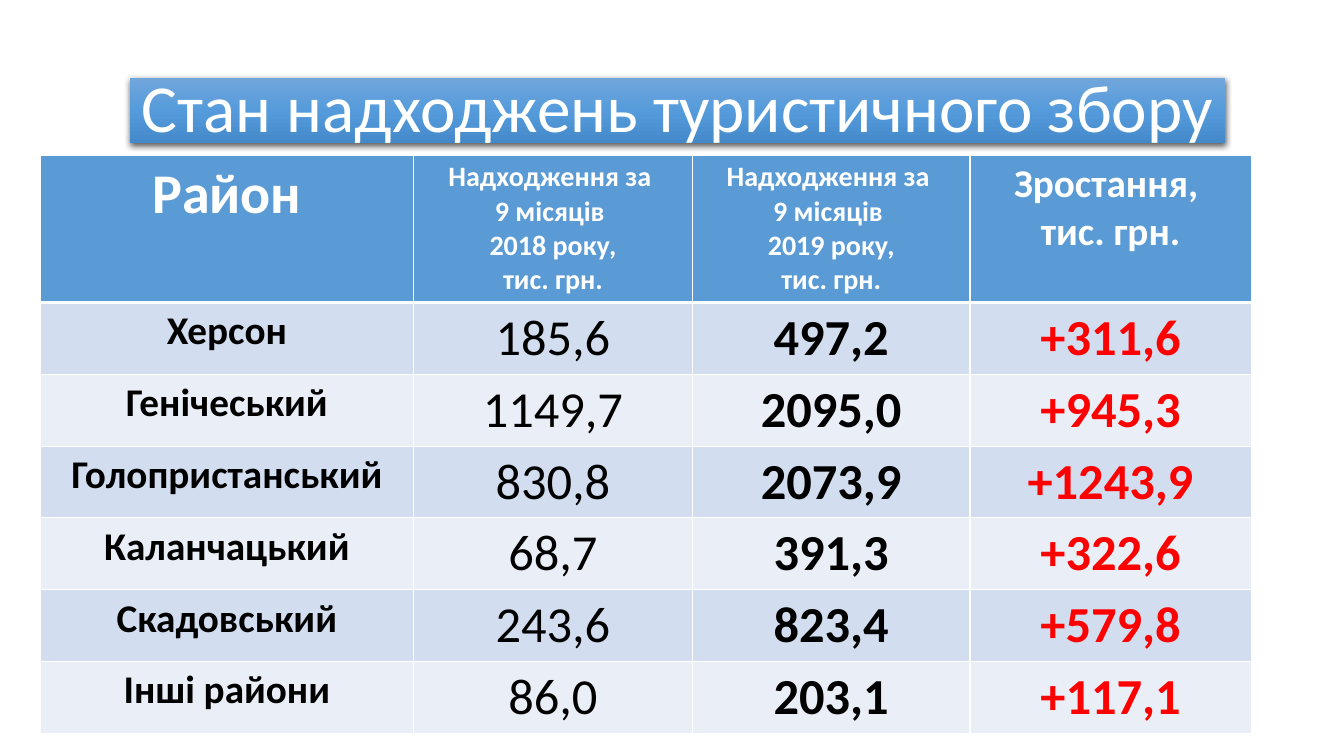
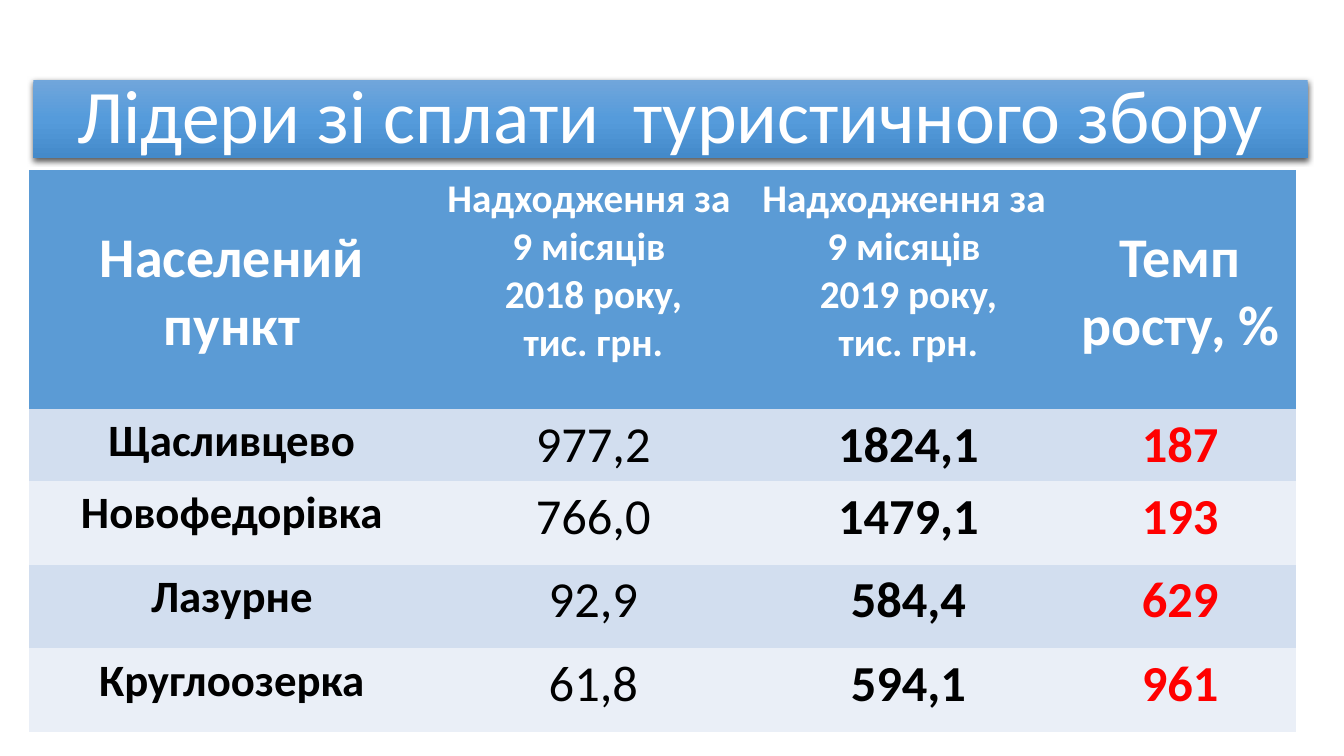
from dataclasses import dataclass

import lxml.etree
import pptx
import pptx.dml.color
import pptx.enum.text
import pptx.oxml
import pptx.util

PX = 9144  # EMU in one px: 100 px to the inch
SLIDE_W, SLIDE_H = 1333, 750
FONT = "Calibri"
WHITE, BLACK, RED = "FFFFFF", "000000", "FF0000"
HEADER_FILL = "5B9BD5"
BAND_FILLS = ("D2DEEF", "EAEFF7")
TITLE_STOPS = ((0, "71A6DB"), (50, "559BDB"), (100, "448ACA"))
NO_GRID_STYLE = "{2D5ABB26-0587-4C30-8999-92F81FD0307C}"
NS = "http://schemas.openxmlformats.org/drawingml/2006/main"
CENTER = pptx.enum.text.PP_ALIGN.CENTER


@dataclass
class Header:
    lines: tuple[str, ...]
    size: int
    top: int = 5


@dataclass
class Style:
    size: int
    bold: bool
    color: str


@dataclass
class Page:
    title: str
    title_size: int
    title_box: tuple[int, int, int, int]
    table_at: tuple[int, int]
    cols: tuple[int, ...]
    row_heights: tuple[int, ...]
    headers: tuple[Header, ...]
    name_size: int
    rows: tuple[tuple[str, ...], ...]
    grid: bool


def px(n: int) -> pptx.util.Emu:
    return pptx.util.Emu(n * PX)


def rgb(value: str) -> pptx.dml.color.RGBColor:
    return pptx.dml.color.RGBColor.from_string(value)


def income(year: int, size: int) -> Header:
    return Header(("Надходження за ", "9 місяців ", f"{year} року,", "тис. грн."), size)


def set_text(tf, lines: tuple[str, ...], style: Style) -> None:
    for i, line in enumerate(lines):
        p = tf.paragraphs[0] if i == 0 else tf.add_paragraph()
        p.alignment = CENTER
        r = p.add_run()
        r.text = line
        formats = {"name": FONT, "size": pptx.util.Pt(style.size), "bold": style.bold}
        for key, value in formats.items():
            setattr(r.font, key, value)
        r.font.color.rgb = rgb(style.color)


def add_title(s, page: Page) -> None:
    sp = s.shapes.title
    for key, value in zip(("left", "top", "width", "height"), page.title_box):
        setattr(sp, key, px(value))
    # Gradient band with a soft shadow
    stops = "".join(
        f'<a:gs pos="{pos * 1000}"><a:srgbClr val="{color}"/></a:gs>'
        for pos, color in TITLE_STOPS
    )
    parts = (
        '<a:prstGeom xmlns:a="{ns}" prst="rect"><a:avLst/></a:prstGeom>',
        '<a:gradFill xmlns:a="{ns}" rotWithShape="1"><a:gsLst>' + stops
        + '</a:gsLst><a:lin ang="5400000" scaled="0"/></a:gradFill>',
        '<a:effectLst xmlns:a="{ns}"><a:outerShdw blurRad="57150" dist="19050"'
        ' dir="5400000" algn="ctr" rotWithShape="0"><a:srgbClr val="000000">'
        '<a:alpha val="63000"/></a:srgbClr></a:outerShdw></a:effectLst>',
    )
    for xml in parts:
        sp.element.spPr.append(pptx.oxml.parse_xml(xml.format(ns=NS)))
    tf = sp.text_frame
    formats = {
        "auto_size": pptx.enum.text.MSO_AUTO_SIZE.NONE,
        "vertical_anchor": pptx.enum.text.MSO_ANCHOR.MIDDLE,
        "word_wrap": True,
    }
    for key, value in formats.items():
        setattr(tf, key, value)
    set_text(tf, (page.title,), Style(page.title_size, False, WHITE))
    tf.paragraphs[0].line_spacing = 0.9


def add_borders(cell, row: int) -> None:
    # The rule between the header and the body is thicker
    widths = {"L": 1, "R": 1, "T": 3 if row == 1 else 1, "B": 3 if row == 0 else 1}
    tc_pr = cell._tc.get_or_add_tcPr()
    for side, width in widths.items():
        ln = lxml.etree.SubElement(tc_pr, f"{{{NS}}}ln{side}", w=str(pptx.util.Pt(width)))
        fill = lxml.etree.SubElement(ln, f"{{{NS}}}solidFill")
        lxml.etree.SubElement(fill, f"{{{NS}}}srgbClr", val=WHITE)


def add_cell(cell, row: int, fill: str, lines: tuple[str, ...], style: Style, grid: bool) -> None:
    if grid:
        add_borders(cell, row)
    cell.fill.solid()
    cell.fill.fore_color.rgb = rgb(fill)
    set_text(cell.text_frame, lines, style)


def add_table(s, page: Page) -> None:
    left, top = page.table_at
    box = (left, top, sum(page.cols), sum(page.row_heights))
    table = s.shapes.add_table(
        len(page.row_heights), len(page.cols), *(px(n) for n in box)
    ).table
    table._tbl.tblPr.find(f"{{{NS}}}tableStyleId").text = NO_GRID_STYLE
    for col, width in zip(table.columns, page.cols):
        col.width = px(width)
    for row, height in zip(table.rows, page.row_heights):
        row.height = px(height)

    # Header row
    for j, header in enumerate(page.headers):
        cell = table.cell(0, j)
        cell.margin_top = px(header.top)
        add_cell(cell, 0, HEADER_FILL, header.lines, Style(header.size, True, WHITE), page.grid)

    # Body rows, one text style to a column
    styles = (
        Style(page.name_size, True, BLACK),
        Style(36, False, BLACK),
        Style(36, True, BLACK),
        Style(36, True, RED),
    )
    for i, values in enumerate(page.rows, start=1):
        fill = BAND_FILLS[(i - 1) % 2]
        for j, (value, style) in enumerate(zip(values, styles)):
            add_cell(table.cell(i, j), i, fill, (value,), style, page.grid)


PAGES = (
    Page(
        title="Стан надходжень туристичного збору",
        title_size=48,
        title_box=(129, 77, 1086, 65),
        table_at=(40, 154),
        cols=(370, 277, 275, 279),
        row_heights=(104,) + (68,) * 6,
        headers=(
            Header(("Район",), 40),
            income(2018, 20),
            income(2019, 20),
            Header(("Зростання, ", "тис. грн."), 28),
        ),
        name_size=28,
        rows=(
            ("Херсон", "185,6", "497,2", "+311,6"),
            ("Генічеський", "1149,7", "2095,0", "+945,3"),
            ("Голопристанський", "830,8", "2073,9", "+1243,9"),
            ("Каланчацький", "68,7", "391,3", "+322,6"),
            ("Скадовський", "243,6", "823,4", "+579,8"),
            ("Інші райони", "86,0", "203,1", "+117,1"),
        ),
        grid=True,
    ),
    Page(
        title="Лідери зі сплати  туристичного збору",
        title_size=54,
        title_box=(33, 79, 1264, 78),
        table_at=(29, 169),
        cols=(402, 315, 310, 229),
        row_heights=(237, 68) + (83,) * 3,
        headers=(
            Header(("Населений пункт",), 40, top=53),
            income(2018, 28),
            income(2019, 28),
            Header(("Темп росту, %",), 40, top=53),
        ),
        name_size=32,
        rows=(
            ("Щасливцево", "977,2", "1824,1", "187"),
            ("Новофедорівка", "766,0", "1479,1", "193"),
            ("Лазурне", "92,9", "584,4", "629"),
            ("Круглоозерка", "61,8", "594,1", "961"),
        ),
        grid=False,
    ),
)


def main() -> None:
    prs = pptx.Presentation()
    prs.slide_width, prs.slide_height = px(SLIDE_W), px(SLIDE_H)
    for page in PAGES:
        s = prs.slides.add_slide(prs.slide_layouts[5])
        add_title(s, page)
        add_table(s, page)
    prs.save("out.pptx")


if __name__ == "__main__":
    main()
